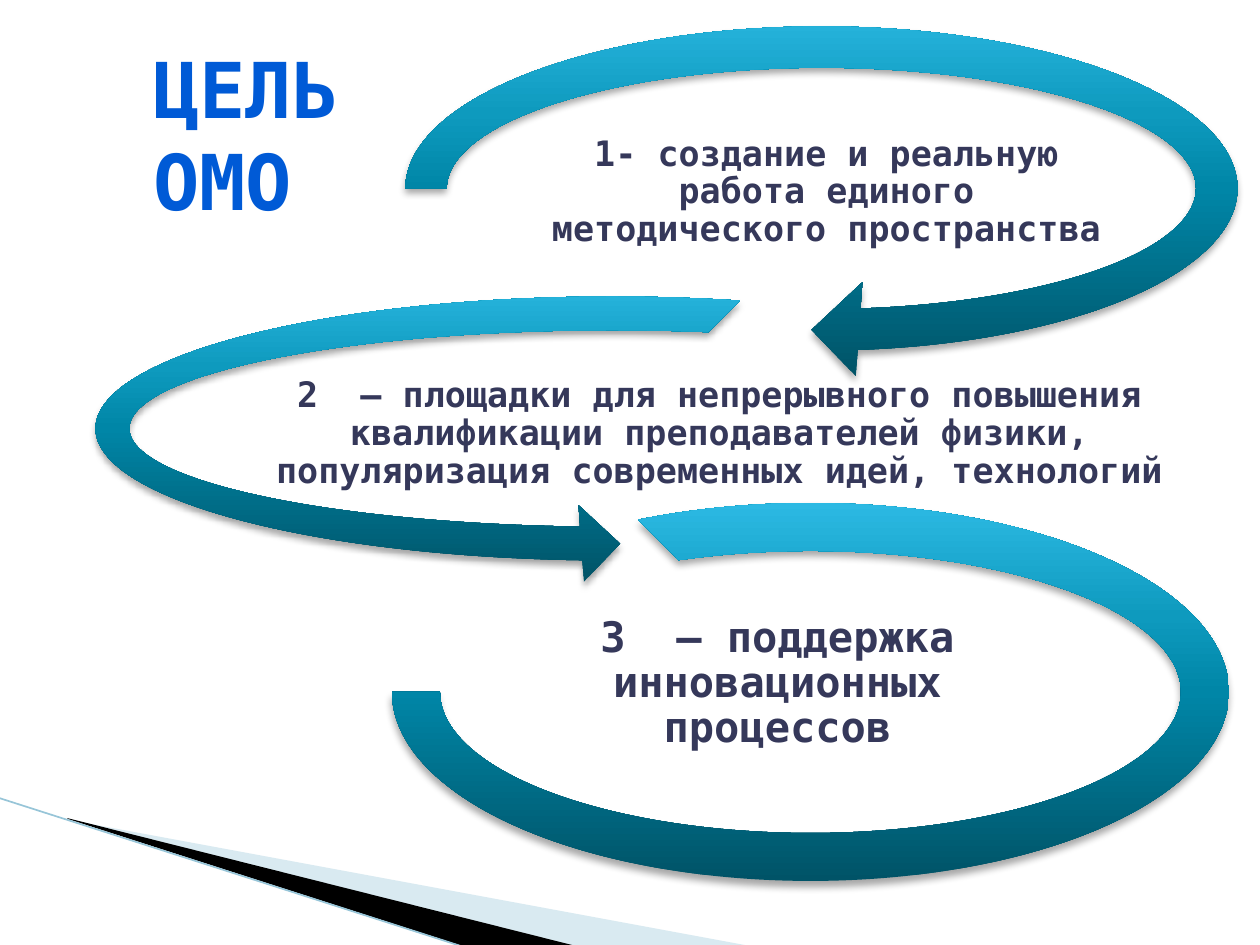
"""Builds a slide with three looping arrows that state the goals of the association."""
import pptx
import pptx.dml.color
import pptx.enum.shapes
import pptx.enum.text
import pptx.oxml
import pptx.oxml.ns
import pptx.util

PX = 914400 / 126
FONT = "DejaVu Sans Mono"
COLORS = {"wedge": "A0CBDC", "black": "000000", "edge": "97C5D8", "goal": "35385A",
          "title_outline": "23487C"}
TITLE_STOPS = {0: "002D6A", 43: "005AD6", 48: "0054C7", 100: "002D6A"}
LOOP_STOPS = {0: "005367", 50: "0086A7", 70: "0E9ABE", 100: "2CB9E3"}
NS = pptx.oxml.ns.nsdecls("a")
qn = pptx.oxml.ns.qn
SHAPE = pptx.enum.shapes.MSO_SHAPE


def px(*lengths):
    return [round(length * PX) for length in lengths]


def set_gradient(fill, owner, stops, angle):
    fill.gradient()
    fill.gradient_angle = angle
    stop_list = owner.find(qn("a:gradFill")).find(qn("a:gsLst"))
    for stop in list(stop_list):
        stop_list.remove(stop)
    for position, color in stops.items():
        stop_list.append(pptx.oxml.parse_xml(
            f'<a:gs {NS} pos="{position * 1000}"><a:srgbClr val="{color}"/></a:gs>'))


deck = pptx.Presentation()
deck.slide_width, deck.slide_height = px(1260, 945)
slide = deck.slides.add_slide(deck.slide_layouts[6])
rgb = pptx.dml.color.RGBColor.from_string

wedges = [
    ("wedge", 40, [(69, 820), (750, 946), (575, 946), (69, 819)]),
    ("black", 100, [(67, 818), (576, 946), (469, 948), (68, 819)]),
]
for color, opacity, corners in wedges:
    builder = slide.shapes.build_freeform(*corners[0], scale=PX)
    builder.add_line_segments(corners[1:], close=True)
    wedge = builder.convert_to_shape()
    wedge.shadow.inherit = False
    wedge.fill.solid()
    wedge.fill.fore_color.rgb = rgb(COLORS[color])
    wedge.line.fill.background()
    if opacity < 100:
        wedge_color = wedge._element.spPr.find(qn("a:solidFill"))[0]
        wedge_color.append(pptx.oxml.parse_xml(f'<a:alpha {NS} val="{opacity * 1000}"/>'))

edge = slide.shapes.add_connector(
    pptx.enum.shapes.MSO_CONNECTOR.STRAIGHT, *px(-1, 798, 467, 948))
edge.line.color.rgb = rgb(COLORS["edge"])
edge.line.width = pptx.util.Pt(0.95)
edge._element.spPr.append(pptx.oxml.parse_xml(f"<a:effectLst {NS}/>"))

title = slide.shapes.add_textbox(*px(50, 35, 392, 199))
title.text_frame.word_wrap = True
title.text_frame.auto_size = pptx.enum.text.MSO_AUTO_SIZE.SHAPE_TO_FIT_TEXT
title_line = title.text_frame.paragraphs[0]
title_line.alignment = pptx.enum.text.PP_ALIGN.CENTER
title_run = title_line.add_run()
title_run.text = "ЦЕЛЬ ОМО "
title_run.font.name = FONT
title_run.font.size = pptx.util.Pt(44)
title_run.font.bold = True
title_props = title_run._r.get_or_add_rPr()
set_gradient(title_run.font.fill, title_props, TITLE_STOPS, 270)
title_props.insert(0, pptx.oxml.parse_xml(
    f'<a:ln {NS} w="9017"><a:solidFill><a:srgbClr val="{COLORS["title_outline"]}"/>'
    "</a:solidFill></a:ln>"))

goals = [
    (SHAPE.CIRCULAR_ARROW, (379, 0, 885, 377), (0.11, 11.42, 45, 108, 0.125),
     "1- создание и реальную работа единого методического пространства",
     (530, 49, 593, 287), 20, 1),
    (SHAPE.LEFT_CIRCULAR_ARROW, (74, 275, 1076, 307), (0.11, 11.42, 63, 189, 0.125),
     "2  – площадки для непрерывного повышения квалификации преподавателей физики, "
     "популяризация современных идей, технологий",
     (273, 363, 893, 142), 20, 1),
    (SHAPE.BLOCK_ARC, (392, 503, 837, 378), (135, 108, 0.127),
     "3  – поддержка инновационных процессов",
     (571, 591, 413, 186), 24, 2),
]
for loop_kind, loop_box, adjustments, wording, goal_box, size, inset in goals:
    loop = slide.shapes.add_shape(loop_kind, *px(*loop_box))
    for index, value in enumerate(adjustments):
        loop.adjustments[index] = value
    set_gradient(loop.fill, loop._element.spPr, LOOP_STOPS, 90)
    loop.line.fill.background()
    loop.shadow.inherit = False
    loop._element.spPr.find(qn("a:effectLst")).append(pptx.oxml.parse_xml(
        f'<a:outerShdw {NS} blurRad="50800" dist="38100" dir="5400000" rotWithShape="0">'
        f'<a:srgbClr val="{COLORS["black"]}"><a:alpha val="35000"/></a:srgbClr>'
        "</a:outerShdw>"))

    goal = slide.shapes.add_textbox(*px(*goal_box)).text_frame
    goal.word_wrap = True
    goal.vertical_anchor = pptx.enum.text.MSO_ANCHOR.MIDDLE
    goal.margin_left, goal.margin_top, goal.margin_right, goal.margin_bottom = px(*[inset] * 4)
    goal_line = goal.paragraphs[0]
    goal_line.alignment = pptx.enum.text.PP_ALIGN.CENTER
    goal_line.line_spacing = 0.9
    goal_run = goal_line.add_run()
    goal_run.text = wording
    goal_run.font.name = FONT
    goal_run.font.size = pptx.util.Pt(size)
    goal_run.font.bold = True
    goal_run.font.color.rgb = rgb(COLORS["goal"])

deck.save("out.pptx")
